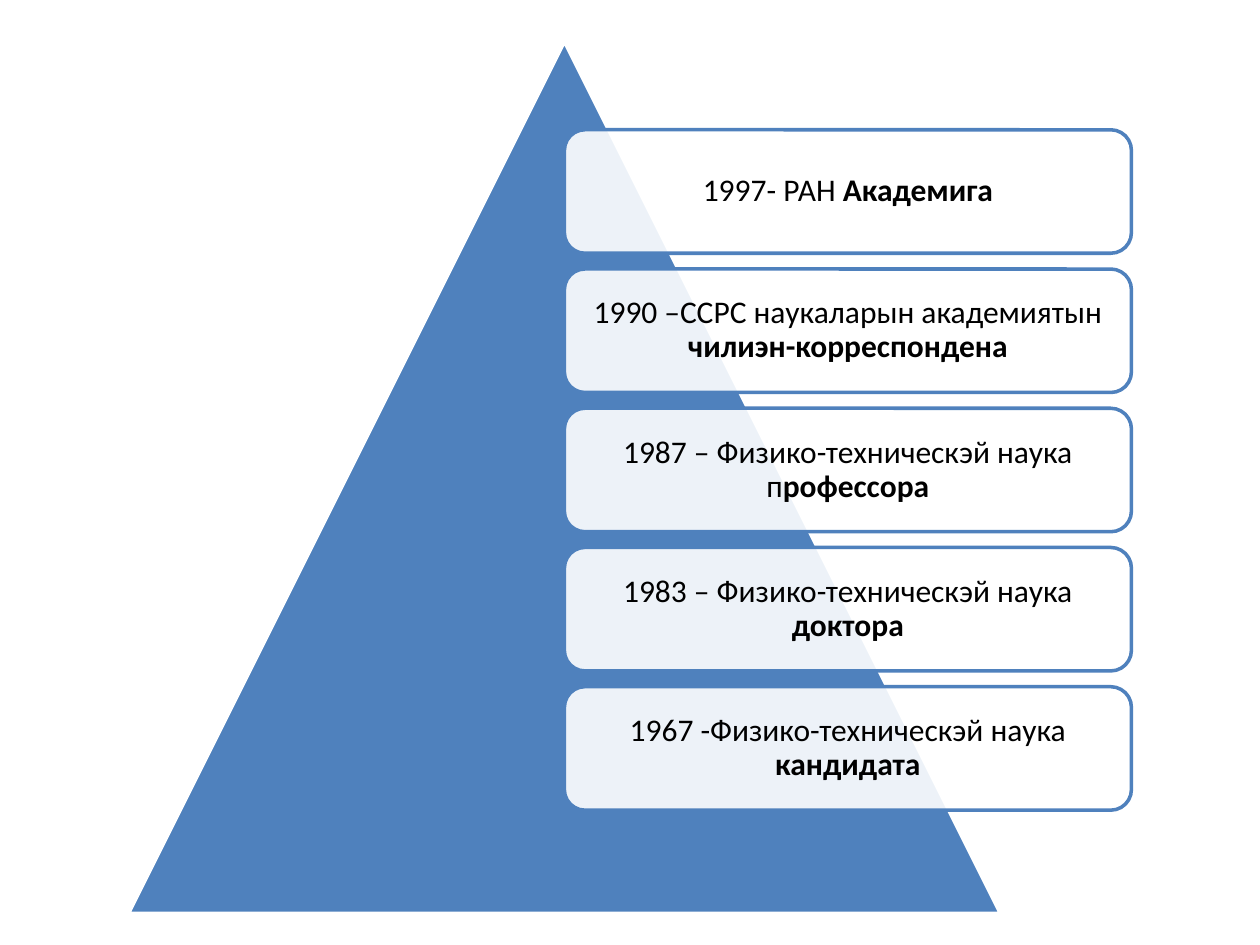
from lxml import etree
from pptx import Presentation
from pptx.dml.color import RGBColor
from pptx.enum.shapes import MSO_SHAPE as Shape
from pptx.enum.text import MSO_ANCHOR as Anchor, PP_ALIGN as Align
from pptx.oxml.ns import qn
from pptx.util import Inches, Pt

DEGREES = [
    ("1997- РАН ", "Академига"),
    ("1990 –ССРС наукаларын академиятын ", "чилиэн-корреспондена"),
    ("1987 – Физико-техническэй наука п", "рофессора"),
    ("1983 – Физико-техническэй наука ", "доктора"),
    ("1967 -Физико-техническэй наука ", "кандидата"),
]
THEME = {
    "blue": RGBColor(0x4F, 0x81, 0xBD),
    "white": RGBColor(0xFF, 0xFF, 0xFF),
    "black": RGBColor(0, 0, 0),
    "font": "Calibri",
    "size": Pt(18),
    "line": Pt(2),
    "opacity": 90,
}
PYRAMID = (1.02, 0.33, 6.92, 6.92)
BOX_LEFT, BOX_TOP, BOX_WIDTH, BOX_HEIGHT = 4.48, 1.03, 4.5, 0.98
BOX_STEP = 1.105
INSET = Inches(0.07)
FRAME_FORMAT = {
    "word_wrap": True,
    "vertical_anchor": Anchor.MIDDLE,
    "margin_left": INSET,
    "margin_right": INSET,
    "margin_top": INSET,
    "margin_bottom": INSET,
}
PARA_FORMAT = {"alignment": Align.CENTER, "line_spacing": 0.9}


def apply_format(target, values):
    for name, value in values.items():
        setattr(target, name, value)


def add_figure(page, kind, place, fill, line):
    figure = page.shapes.add_shape(kind, *map(Inches, place))
    figure.shadow.inherit = False
    figure.fill.solid()
    figure.fill.fore_color.rgb = THEME[fill]
    figure.line.color.rgb = THEME[line]
    figure.line.width = THEME["line"]
    return figure


def set_opacity(figure, percent):
    color = figure.fill._xPr.find(qn("a:solidFill"))[0]
    etree.SubElement(color, qn("a:alpha"), val=str(percent * 1000))


def write_degree(box, degree):
    frame = box.text_frame
    apply_format(frame, FRAME_FORMAT)
    para = frame.paragraphs[0]
    apply_format(para, PARA_FORMAT)
    for text, bold in zip(degree, (False, True)):
        span = para.add_run()
        span.text = text
        apply_format(span.font, {"name": THEME["font"], "size": THEME["size"], "bold": bold})
        span.font.color.rgb = THEME["black"]


def main():
    deck = Presentation()
    apply_format(deck, {"slide_width": Inches(10), "slide_height": Inches(7.5)})
    page = deck.slides.add_slide(deck.slide_layouts[6])
    add_figure(page, Shape.ISOSCELES_TRIANGLE, PYRAMID, "blue", "white")
    for row, degree in enumerate(DEGREES):
        place = (BOX_LEFT, BOX_TOP + row * BOX_STEP, BOX_WIDTH, BOX_HEIGHT)
        box = add_figure(page, Shape.ROUNDED_RECTANGLE, place, "white", "blue")
        set_opacity(box, THEME["opacity"])
        write_degree(box, degree)
    deck.save("out.pptx")


if __name__ == "__main__":
    main()
